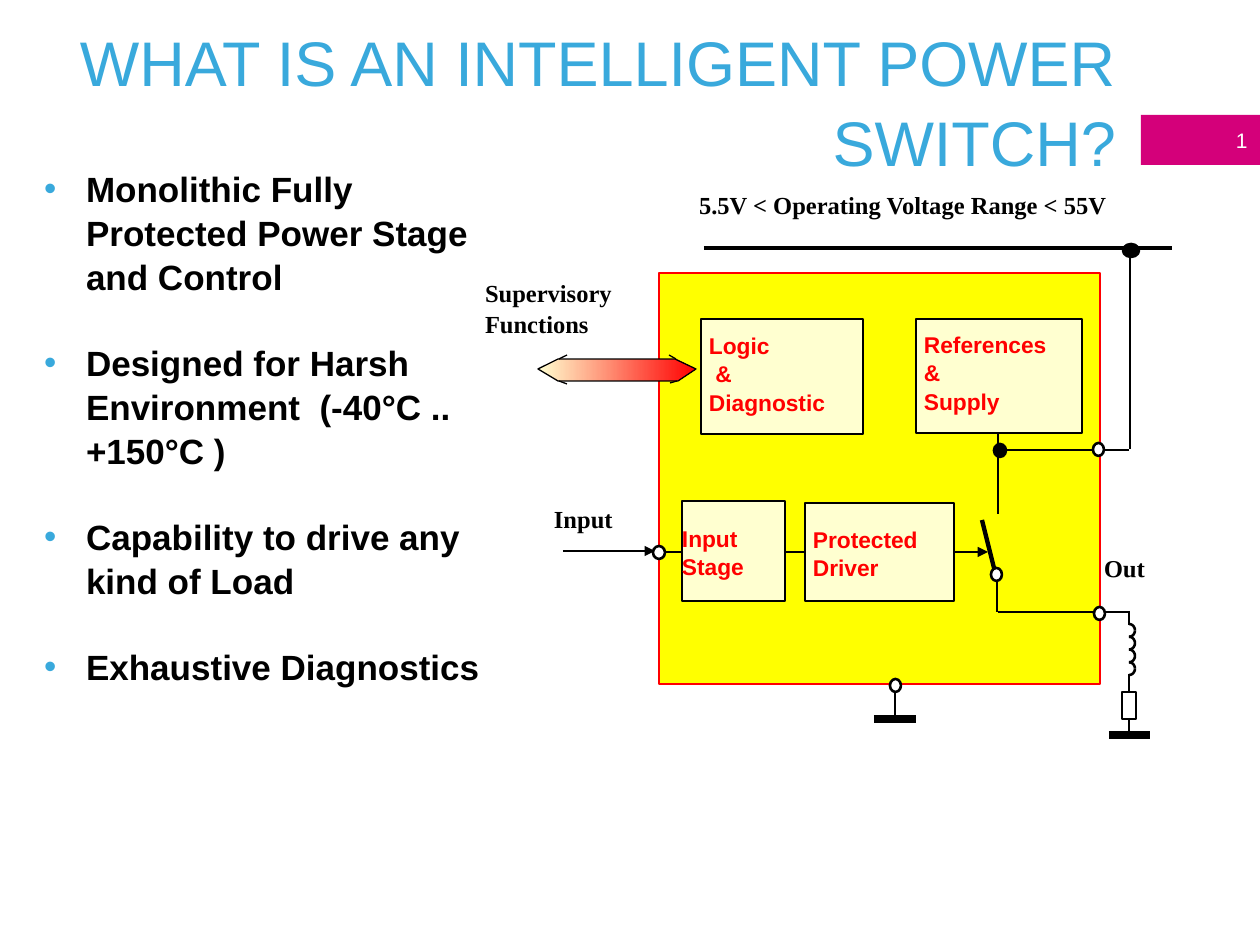
"""Build the intelligent power switch slide with its block diagram."""
import math

import lxml.etree
import pptx
import pptx.dml.color
import pptx.enum.dml
import pptx.enum.shapes
import pptx.enum.text
import pptx.oxml.ns
import pptx.util

RGB = pptx.dml.color.RGBColor
SHAPES = pptx.enum.shapes.MSO_SHAPE
ALIGN = pptx.enum.text.PP_ALIGN
ANCHOR = pptx.enum.text.MSO_ANCHOR
BLACK = RGB(0x00, 0x00, 0x00)
WHITE = RGB(0xFF, 0xFF, 0xFF)
BLUE = RGB(0x39, 0xA9, 0xDC)
MAGENTA = RGB(0xD4, 0x00, 0x7A)
RED = RGB(0xFF, 0x00, 0x00)
YELLOW = RGB(0xFF, 0xFF, 0x00)
CREAM = RGB(0xFF, 0xFF, 0xD0)
EMU_PER_PX = 914400 / 126
THIN, MEDIUM, THICK, GROUND = 0.73, 1.46, 2.47, 4.97
SANS, SERIF = "Arial", "Times New Roman"

TITLE = "WHAT IS AN INTELLIGENT POWER SWITCH?"
BULLETS = [
    "Monolithic Fully Protected Power Stage and Control",
    "Designed for Harsh Environment  (-40°C .. +150°C )",
    "Capability to drive any kind of Load",
    "Exhaustive Diagnostics",
]
CHIP = (659, 273, 441, 411)
BLOCKS = [
    ((805, 503, 149, 98), THIN, (813, 524, 139, 63), ["Protected Driver"]),
    ((701, 319, 162, 115), THIN, (709, 330, 150, 103), ["Logic", " &", "Diagnostic"]),
    ((916, 319, 166, 114), THIN, (924, 329, 165, 103), ["References", "&", "Supply"]),
    ((682, 501, 103, 100), MEDIUM, (682, 523, 105, 64), ["Input Stage"]),
]
LABELS = [
    ((485, 277, 168, 67), "Supervisory Functions", 0),
    ((699, 189, 498, 59), "5.5V < Operating Voltage Range < 55V", 0),
    ((554, 503, 101, 34), "Input", 0),
    ((1104, 552, 82, 34), "Out", 1),
]
WIRES = [
    (658, 552, 682, 552, THIN),
    (1130, 449, 1130, 248, THIN),
    (1128, 612, 998, 612, THIN),
    (998, 427, 998, 514, THIN),
    (997, 582, 997, 612, THIN),
    (997, 580, 982, 520, THICK),
    (1129, 450, 999, 450, THIN),
    (704, 248, 1172, 248, THICK),
    (895, 683, 895, 722, THIN),
    (874, 719, 916, 719, GROUND),
    (1109, 735, 1150, 735, GROUND),
    (1129, 611, 1129, 625, MEDIUM),
    (1129, 674, 1129, 687, MEDIUM),
    (1129, 687, 1129, 692, MEDIUM),
    (1129, 718, 1129, 724, MEDIUM),
    (1129, 724, 1129, 732, MEDIUM),
]
SIGNALS = [(785, 552, 988, 552, THIN), (563, 551, 655, 551, THIN)]
BARBS = [
    (559, 381, 567, 384, THIN),
    (559, 359, 567, 355, THIN),
    (670, 383, 677, 381, THIN),
    (669, 355, 676, 359, THIN),
]
NODES = [
    ((653, 546, 12, 13), WHITE),
    ((1094, 607, 11, 13), WHITE),
    ((991, 568, 11, 13), WHITE),
    ((1093, 443, 11, 13), WHITE),
    ((994, 444, 12, 13), BLACK),
    ((1123, 244, 16, 13), BLACK),
    ((890, 679, 11, 13), WHITE),
]
SUPERVISORY_ARROW = [(558, 359), (538, 369), (558, 381), (678, 381), (696, 369), (675, 359)]
RESISTOR = [(1122, 719), (1122, 692), (1136, 692), (1136, 719)]
COIL_LEFT, COIL_TOP, COIL_BOTTOM, COIL_RADIUS, COIL_TURNS = 1129, 624, 675, 6, 4
ARC_STEPS = 8


def emu(px):
    return round(px * EMU_PER_PX)


def add_child(parent, tag, **attributes):
    return lxml.etree.SubElement(parent, pptx.oxml.ns.qn(tag), attributes)


def add_paragraph(frame, text, size, color, font=SANS, bold=True, align=ALIGN.LEFT, bullet=False):
    first = not frame.paragraphs[0].runs
    para = frame.paragraphs[0] if first else frame.add_paragraph()
    para.alignment = align
    para.line_spacing = 1.05
    if bullet:
        if not first:
            para.space_before = pptx.util.Pt(24)
        properties = para._p.get_or_add_pPr()
        properties.set("marL", str(emu(42)))
        properties.set("indent", str(emu(-42)))
        add_child(add_child(properties, "a:buClr"), "a:srgbClr", val=str(BLUE))
        add_child(properties, "a:buFont", typeface=SANS)
        add_child(properties, "a:buChar", char="•")
    span = para.add_run()
    span.text = text
    span.font.name, span.font.size, span.font.bold = font, pptx.util.Pt(size), bold
    span.font.color.rgb = color


def add_text(page, place, lines, size, color, rotation=0, anchor=ANCHOR.TOP, **style):
    box = page.shapes.add_textbox(*map(emu, place))
    box.rotation = rotation
    frame = box.text_frame
    frame.word_wrap = True
    frame.vertical_anchor = anchor
    frame.margin_left = frame.margin_right = frame.margin_top = frame.margin_bottom = 0
    for line in lines:
        add_paragraph(frame, line, size, color, **style)


def set_outline(shape, color, width):
    shape.shadow.inherit = False
    shape.line.color.rgb = color
    shape.line.width = pptx.util.Pt(width)


def add_shape(page, kind, place, fill, line=BLACK, width=MEDIUM):
    shape = page.shapes.add_shape(kind, *map(emu, place))
    shape.fill.solid()
    shape.fill.fore_color.rgb = fill
    set_outline(shape, line, width)
    if kind == SHAPES.ROUNDED_RECTANGLE:
        shape.adjustments[0] = 0
    return shape


def add_line(page, start_x, start_y, end_x, end_y, width, arrow=False):
    ends = map(emu, (start_x, start_y, end_x, end_y))
    wire = page.shapes.add_connector(pptx.enum.shapes.MSO_CONNECTOR.STRAIGHT, *ends)
    wire.line.color.rgb = BLACK
    wire.line.width = pptx.util.Pt(width)
    if arrow:
        add_child(wire.line._get_or_add_ln(), "a:tailEnd", type="triangle")
    add_child(wire._element.spPr, "a:effectLst")


def add_outline(page, points, width, close):
    points = [(emu(x), emu(y)) for x, y in points]
    builder = page.shapes.build_freeform(*points[0], scale=1.0)
    builder.add_line_segments(points[1:], close=close)
    shape = builder.convert_to_shape()
    shape.fill.background()
    set_outline(shape, BLACK, width)
    return shape


def add_coil(page):
    radius_y = (COIL_BOTTOM - COIL_TOP) / COIL_TURNS / 2
    for quarter in range(2 * COIL_TURNS):
        center_y = COIL_TOP + (2 * (quarter // 2) + 1) * radius_y
        angles = [(quarter % 2 + step / ARC_STEPS) * math.pi / 2 for step in range(ARC_STEPS + 1)]
        arc = [(COIL_LEFT + COIL_RADIUS * math.sin(a), center_y - radius_y * math.cos(a)) for a in angles]
        add_outline(page, arc, MEDIUM, close=False)


def main():
    deck = pptx.Presentation()
    deck.slide_width, deck.slide_height = emu(1260), emu(945)
    page = deck.slides.add_slide(deck.slide_layouts[6])

    badge = add_shape(page, SHAPES.RECTANGLE, (1141, 115, 119, 50), MAGENTA)
    badge.line.fill.background()
    badge.text_frame.vertical_anchor = ANCHOR.MIDDLE
    add_paragraph(badge.text_frame, "1", 12, WHITE, bold=False, align=ALIGN.RIGHT)
    add_text(page, (15, 23, 1101, 153), [TITLE], 36, BLUE, anchor=ANCHOR.MIDDLE, bold=False, align=ALIGN.RIGHT)
    add_text(page, (44, 165, 446, 546), BULLETS, 20, BLACK, bullet=True)

    add_shape(page, SHAPES.ROUNDED_RECTANGLE, CHIP, YELLOW, RED)
    for wire in WIRES:
        add_line(page, *wire)
    for signal in SIGNALS:
        add_line(page, *signal, arrow=True)
    for place, width, text_place, lines in BLOCKS:
        add_shape(page, SHAPES.ROUNDED_RECTANGLE, place, CREAM, width=width)
        add_text(page, text_place, lines, 13, RED)
    for place, color in NODES:
        add_shape(page, SHAPES.OVAL, place, color)
    for place, text, rotation in LABELS:
        add_text(page, place, [text], 14, BLACK, rotation=rotation, font=SERIF)

    arrow = add_outline(page, SUPERVISORY_ARROW, THIN, close=True)
    arrow.fill.gradient()
    arrow.fill.gradient_angle = 0
    for stop, color in zip(arrow.fill.gradient_stops, (CREAM, RED)):
        stop.color.rgb = color
    for barb in BARBS:
        add_line(page, *barb)
    add_coil(page)
    add_outline(page, RESISTOR, MEDIUM, close=True)
    deck.save("out.pptx")


if __name__ == "__main__":
    main()
